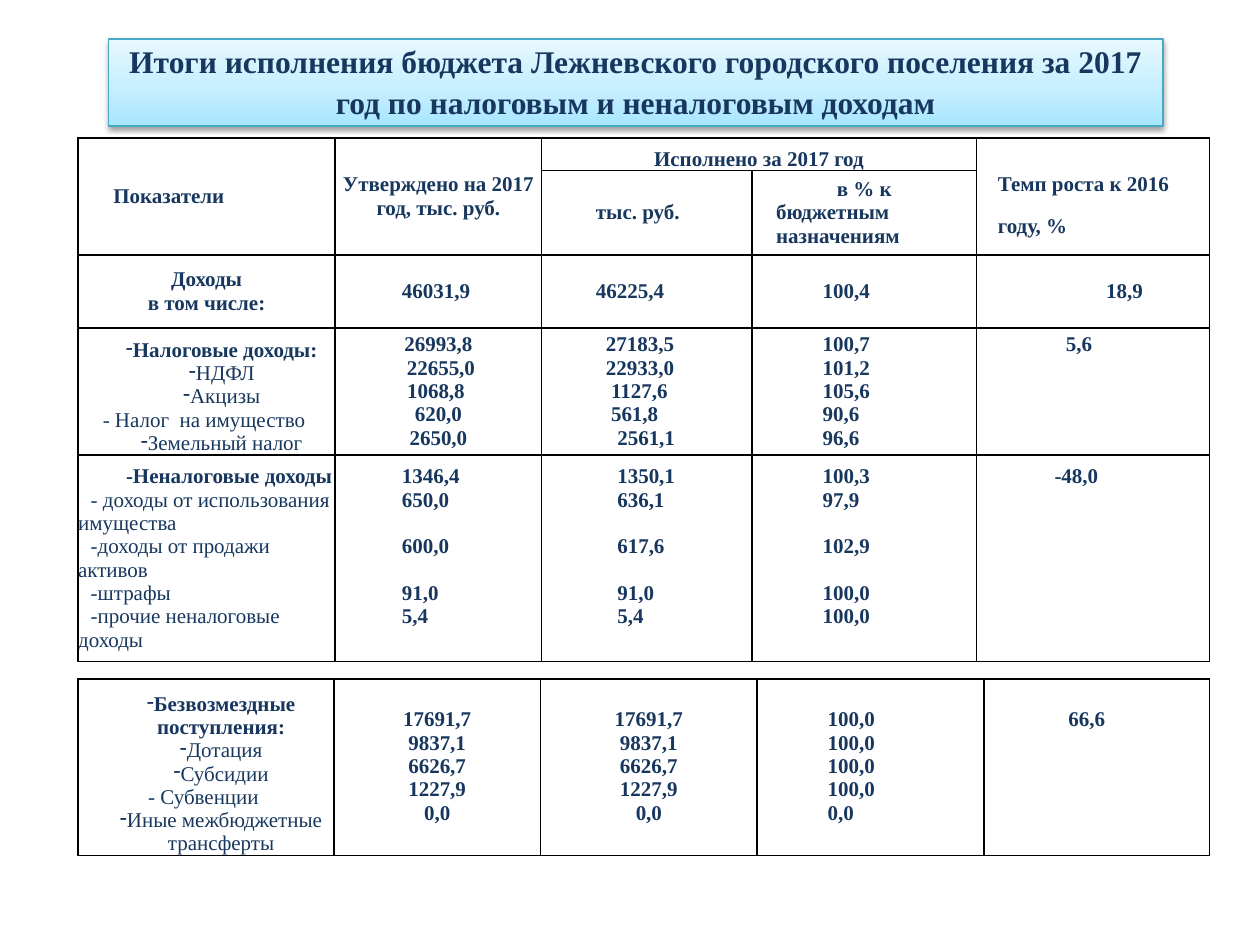
import copy
from dataclasses import dataclass

import pptx
import pptx.dml.color
import pptx.enum.text
import pptx.oxml
import pptx.oxml.ns
import pptx.util

FONT = "Times New Roman"
NAVY = "17375E"
GRID_COLUMNS = 100  # the slide is 100 x 75 square grid units
LINE = 13.3  # height of one 12 pt line, in points
ANCHOR = pptx.enum.text.MSO_ANCHOR
ALIGN = pptx.enum.text.PP_ALIGN

presentation = pptx.Presentation()
presentation.slide_width = pptx.util.Inches(10)
presentation.slide_height = pptx.util.Inches(7.5)


@dataclass
class Line:
    """One paragraph; lengths are grid units, gap counts skipped lines."""
    text: str
    left: float = 0
    right: float = 0
    first: float = 0
    center: bool = False
    bold: bool = True
    bullet: bool = False
    gap: int = 0
    spacing: float | None = None


@dataclass
class Cell:
    row: int
    column: int
    lines: list[Line]
    anchor: ANCHOR = ANCHOR.MIDDLE
    top: float = 0
    row_span: int = 1
    column_span: int = 1


def units(count: float) -> int:
    return round(presentation.slide_width * count / GRID_COLUMNS)


def color(value: str) -> pptx.dml.color.RGBColor:
    return pptx.dml.color.RGBColor.from_string(value)


def add_xml(parent, xml: str) -> None:
    namespace = pptx.oxml.ns.nsdecls("a")
    parent.append(pptx.oxml.parse_xml(xml.replace(">", f" {namespace}>", 1)
                                      if "/>" not in xml.split(">")[0] + ">"
                                      else xml.replace("/>", f" {namespace}/>", 1)))


def write(paragraph, text: str, *, size: float = 12, bold: bool = True,
          center: bool = False, spacing=None, before: float = 0) -> None:
    paragraph.alignment = ALIGN.CENTER if center else ALIGN.LEFT
    paragraph.space_before = pptx.util.Pt(before)
    paragraph.space_after = pptx.util.Pt(0)
    if spacing is not None:
        paragraph.line_spacing = spacing
    run = paragraph.add_run()
    run.text = text
    run.font.name, run.font.size, run.font.bold = FONT, pptx.util.Pt(size), bold
    run.font.color.rgb = color(NAVY)


def clear_margins(holder) -> None:
    holder.margin_left = holder.margin_right = 0
    holder.margin_top = holder.margin_bottom = 0


def add_borders(cell) -> None:
    properties = cell._tc.get_or_add_tcPr()
    for position, side in enumerate(("lnL", "lnR", "lnT", "lnB")):
        add_xml(properties, f'<a:{side} w="12700"><a:solidFill>'
                f'<a:srgbClr val="000000"/></a:solidFill></a:{side}>')
        properties.insert(position, properties[-1])


def fill_cell(table, content: Cell) -> None:
    cell = table.cell(content.row, content.column)
    if content.row_span * content.column_span > 1:
        cell.merge(table.cell(content.row + content.row_span - 1,
                              content.column + content.column_span - 1))
    cell.vertical_anchor = content.anchor
    cell.margin_top = units(content.top)
    for index, line in enumerate(content.lines):
        frame = cell.text_frame
        paragraph = frame.add_paragraph() if index else frame.paragraphs[0]
        write(paragraph, line.text, bold=line.bold, center=line.center,
              before=line.gap * LINE,
              spacing=pptx.util.Pt(line.spacing) if line.spacing else None)
        properties = paragraph._p.get_or_add_pPr()
        properties.set("marL", str(units(line.left)))
        properties.set("marR", str(units(line.right)))
        properties.set("indent", str(units(line.first)))
        if line.bullet:
            add_xml(properties, '<a:buChar char="-"/>')


def add_table(slide, top: float, columns: list[float], rows: list[float],
              cells: list[Cell]) -> None:
    shape = slide.shapes.add_table(len(rows), len(columns), units(6.2), units(top),
                                   units(sum(columns)), units(sum(rows)))
    table = shape.table
    table.first_row = table.horz_banding = False
    for column, width in zip(table.columns, columns):
        column.width = units(width)
    for row, height in zip(table.rows, rows):
        row.height = units(height)
    for cell in table.iter_cells():
        clear_margins(cell)
        cell.fill.background()
        add_borders(cell)
        cell.text_frame.paragraphs[0].font.size = pptx.util.Pt(12)
    for content in cells:
        fill_cell(table, content)


def numbers(text: str, **layout) -> list[Line]:
    return [Line(number, **layout) for number in text.split()]


def spaced_numbers(text: str, left: float) -> list[Line]:
    """Numbers that leave a line free beside each two-line label."""
    return [Line(number, left=left, gap=int(index in (2, 3)))
            for index, number in enumerate(text.split())]


def item(text: str, bold: bool = False) -> Line:
    return Line(text, left=2.4, center=True, bold=bold, bullet=True)


def add_title(slide, text: str) -> None:
    title = slide.shapes.title
    title.left, title.top = units(8.6), units(3.1)
    title.width, title.height = units(83.7), units(6.9)
    frame = title.text_frame
    clear_margins(frame)
    frame.word_wrap = True
    frame.auto_size = pptx.enum.text.MSO_AUTO_SIZE.NONE
    frame.vertical_anchor = ANCHOR.TOP
    write(frame.paragraphs[0], text, size=18, center=True, spacing=1.08)
    # Three-stop gradient, darker at the bottom
    title.fill.gradient()
    title.fill.gradient_angle = 90
    stop = title._element.xpath(".//a:gs")[0]
    stop.addnext(copy.deepcopy(stop))
    stops = ((0, "A7E6FF"), (0.35, "C1EDFF"), (1, "E7F8FF"))
    for gradient_stop, (position, tint) in zip(title.fill.gradient_stops, stops):
        gradient_stop.position = position
        gradient_stop.color.rgb = color(tint)
    title.line.color.rgb = color("46AAC5")
    title.line.width = pptx.util.Pt(0.75)
    add_xml(title._element.spPr, '<a:effectLst><a:outerShdw blurRad="39370" dist="20320" '
            'dir="5400000" rotWithShape="0"><a:srgbClr val="000000">'
            '<a:alpha val="38000"/></a:srgbClr></a:outerShdw></a:effectLst>')


slide = presentation.slides.add_slide(presentation.slide_layouts[5])
add_title(slide, "Итоги исполнения бюджета Лежневского городского поселения "
                 "за 2017 год по налоговым и неналоговым доходам")

# Own revenue: two header rows, the total, tax and non-tax revenue
TOP, BOTTOM = ANCHOR.TOP, ANCHOR.BOTTOM
add_table(slide, 10.95, [20.4, 16.4, 16.7, 17.8, 18.5], [2.6, 6.6, 5.8, 10.1, 16.4], [
    Cell(0, 0, [Line("Показатели", left=2.8)], row_span=2),
    Cell(0, 1, [Line("Утверждено на 2017 год, тыс. руб.", center=True)], row_span=2),
    Cell(0, 2, [Line("Исполнено за 2017 год", center=True)], BOTTOM, column_span=2),
    Cell(0, 4, [Line("Темп роста к 2016 году, %", left=1.7, spacing=24)], row_span=2),
    Cell(1, 2, [Line("тыс. руб.", left=4.3)]),
    Cell(1, 3, [Line("в % к", center=True), Line("бюджетным", left=1.9),
                Line("назначениям", left=1.9)]),
    Cell(2, 0, [Line("Доходы", center=True), Line("в том числе:", center=True)]),
    Cell(2, 1, numbers("46031,9", left=5.3)),
    Cell(2, 2, numbers("46225,4", left=4.3)),
    Cell(2, 3, numbers("100,4", left=5.6)),
    Cell(2, 4, numbers("18,9", left=5, center=True)),
    Cell(3, 0, [item("Налоговые доходы:", bold=True), item("НДФЛ"), item("Акцизы"),
                Line("- Налог  на имущество", right=0.4, center=True, bold=False),
                item("Земельный налог")], BOTTOM),
    Cell(3, 1, [Line("26993,8", center=True), Line("22655,0", left=0.4, center=True),
                Line("1068,8", right=0.4, center=True),
                *numbers("620,0 2650,0", center=True)]),
    Cell(3, 2, [*numbers("27183,5 22933,0", left=5.1), *numbers("1127,6 561,8", left=5.5),
                Line("2561,1", left=6)]),
    Cell(3, 3, numbers("100,7 101,2 105,6 90,6 96,6", left=5.6)),
    Cell(3, 4, numbers("5,6", left=7.1), TOP, 0.4),
    Cell(4, 0, [Line("-Неналоговые доходы", left=2.8, first=1)] + [
        Line(text, first=1, bold=False) for text in (
            "- доходы от использования имущества", "-доходы от продажи активов",
            "-штрафы", "-прочие неналоговые доходы")], TOP, 0.8),
    Cell(4, 1, spaced_numbers("1346,4 650,0 600,0 91,0 5,4", 5.3), TOP, 0.8),
    Cell(4, 2, spaced_numbers("1350,1 636,1 617,6 91,0 5,4", 6), TOP, 0.8),
    Cell(4, 3, spaced_numbers("100,3 97,9 102,9 100,0 100,0", 5.6), TOP, 0.8),
    Cell(4, 4, numbers("-48,0", left=6.2), TOP, 0.8),
])

# Transfers from other budgets
transfers = "17691,7 9837,1 6626,7 1227,9 0,0"
add_table(slide, 53.9, [20.3, 16.4, 17.2, 18, 17.9], [14], [
    Cell(0, 0, [item("Безвозмездные поступления:", bold=True), item("Дотация"),
                item("Субсидии"), Line("- Субвенции", right=0.4, center=True, bold=False),
                item("Иные межбюджетные трансферты")], BOTTOM),
    *(Cell(0, column, numbers(transfers, center=True), TOP, 2.3) for column in (1, 2)),
    Cell(0, 3, numbers("100,0 100,0 100,0 100,0 0,0", left=5.6), TOP, 2.3),
    Cell(0, 4, numbers("66,6", left=6.7), TOP, 2.3),
])

presentation.save("out.pptx")
